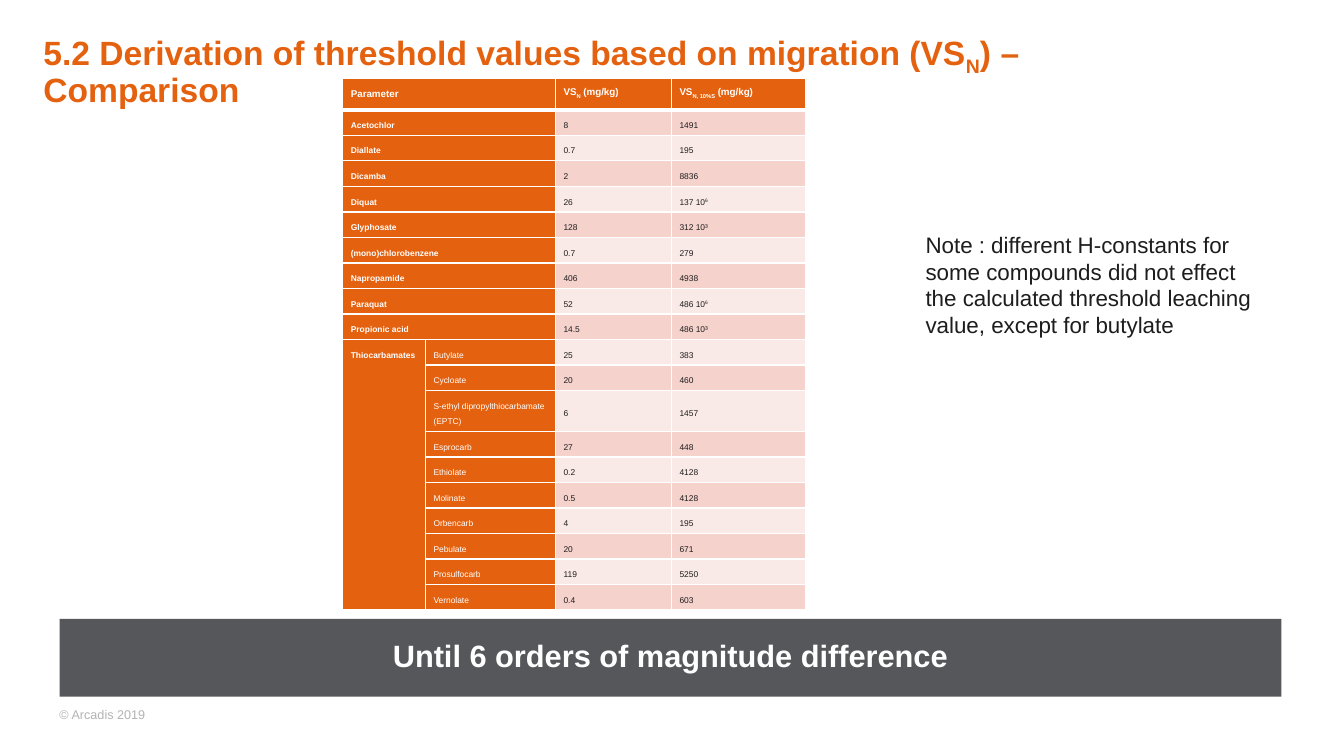
import pptx
import pptx.util
import pptx.dml.color
import pptx.enum.text
import lxml.etree
from pptx.oxml.ns import qn

Inches = pptx.util.Inches
Pt = pptx.util.Pt
Align = pptx.enum.text.PP_ALIGN
Anchor = pptx.enum.text.MSO_ANCHOR

ORANGE, WHITE, INK = "E4610F", "FFFFFF", "1D1D1D"
GREY, SLATE = "B3B3B3", "55575A"
BANDS = ("F5D2CC", "FAEAE7")

TITLE = [
    [("5.2 Derivation of threshold values based on migration (VS", 0), ("N", -25), (") –", 0)],
    [("Comparison", 0)],
]
BANNER = "Until 6 orders of magnitude difference"
NOTE = ("Note : different H-constants for some compounds did not effect "
        "the calculated threshold leaching value, except for butylate")
FOOTER = "© Arcadis 2019"

HEADS = [
    "Parameter",
    [("VS", 0), ("N", -25), (" (mg/kg)", 0)],
    [("VS", 0), ("N, 10%S", -25), (" (mg/kg)", 0)],
]
SINGLES = [
    ("Acetochlor", "8", "1491"),
    ("Diallate", "0.7", "195"),
    ("Dicamba", "2", "8836"),
    ("Diquat", "26", [("137 10", 0), ("6", 30)]),
    ("Glyphosate", "128", "312 10³"),
    ("(mono)chlorobenzene", "0.7", "279"),
    ("Napropamide", "406", "4938"),
    ("Paraquat", "52", [("486 10", 0), ("6", 30)]),
    ("Propionic acid", "14.5", "486 10³"),
]
GROUP = "Thiocarbamates"
MEMBERS = [
    ("Butylate", "25", "383"),
    ("Cycloate", "20", "460"),
    ("S-ethyl dipropylthiocarbamate (EPTC)", "6", "1457"),
    ("Esprocarb", "27", "448"),
    ("Ethiolate", "0.2", "4128"),
    ("Molinate", "0.5", "4128"),
    ("Orbencarb", "4", "195"),
    ("Pebulate", "20", "671"),
    ("Prosulfocarb", "119", "5250"),
    ("Vernolate", "0.4", "603"),
]
WIDTHS = (0.82, 1.29, 1.15, 1.33)
HEAD_H, ROW_H, TALL_H = 0.31, 0.2, 0.3


def color(code):
    return pptx.dml.color.RGBColor.from_string(code)


def write(par, runs, size, code, bold=False):
    if isinstance(runs, str):
        runs = [(runs, 0)]
    for text, base in runs:
        run = par.add_run()
        run.text = text
        run.font.name = "Arial"
        run.font.size = Pt(size)
        run.font.bold = bold
        run.font.color.rgb = color(code)
        if base:
            run.font._element.set("baseline", str(base * 1000))


def place(shape, left, top, width, height):
    shape.left, shape.top = Inches(left), Inches(top)
    shape.width, shape.height = Inches(width), Inches(height)
    return frame(shape)


def frame(shape):
    body = shape.text_frame
    body.word_wrap = True
    body.auto_size = pptx.enum.text.MSO_AUTO_SIZE.NONE
    body.margin_left = body.margin_top = body.margin_right = body.margin_bottom = 0
    body.vertical_anchor = Anchor.TOP
    return body


def label(slide, box, text, size, code):
    shape = slide.shapes.add_textbox(*map(Inches, box))
    write(frame(shape).paragraphs[0], text, size, code)


def border(cell, base):
    props = cell._tc.get_or_add_tcPr()
    for side in "LRTB":
        line = lxml.etree.SubElement(props, qn("a:ln" + side))
        line.set("w", str(Pt(base if side == "B" else 1)))
        fill = lxml.etree.SubElement(line, qn("a:solidFill"))
        lxml.etree.SubElement(fill, qn("a:srgbClr")).set("val", WHITE)


def style(cell, fill, head):
    border(cell, 3 if head else 1)
    cell.fill.solid()
    cell.fill.fore_color.rgb = color(fill)
    cell.margin_left = cell.margin_right = 0
    cell.margin_top = 0 if head else Inches(0.05)
    cell.margin_bottom = Inches(0.05)
    cell.vertical_anchor = Anchor.MIDDLE


def enter(cell, runs, size, code, bold=False):
    par = cell.text_frame.paragraphs[0]
    par._p.get_or_add_pPr().set("marL", str(Inches(0.08)))
    par.line_spacing = Pt(11)
    write(par, runs, size, code, bold)


def add_grid(slide):
    rows = [HEADS] + SINGLES + MEMBERS
    first = 1 + len(SINGLES)
    high = [HEAD_H] + [ROW_H] * (len(rows) - 1)
    high[first + 2] = TALL_H
    grid = slide.shapes.add_table(
        len(rows), len(WIDTHS), Inches(3.4), Inches(0.78),
        Inches(sum(WIDTHS)), Inches(sum(high))).table
    for col, width in zip(grid.columns, WIDTHS):
        col.width = Inches(width)
    for r, (row, height) in enumerate(zip(rows, high)):
        grid.rows[r].height = Inches(height)
        head, member = r == 0, r >= first
        for c in range(len(WIDTHS)):
            style(grid.cell(r, c), ORANGE if head or c < 2 else BANDS[(r - 1) % 2], head)
        if not member:
            grid.cell(r, 0).merge(grid.cell(r, 1))
        size = 7 if head else 6
        enter(grid.cell(r, int(member)), row[0], size, WHITE, not member)
        for c in (2, 3):
            enter(grid.cell(r, c), row[c - 1], size, WHITE if head else INK, head)
    group = grid.cell(first, 0)
    group.merge(grid.cell(len(rows) - 1, 0))
    group.vertical_anchor = Anchor.TOP
    enter(group, GROUP, 6, WHITE, True)


def main():
    deck = pptx.Presentation()
    deck.slide_width, deck.slide_height = Inches(13.33), Inches(7.5)
    slide = deck.slides.add_slide(deck.slide_layouts[1])

    par = place(slide.shapes.title, 0.43, 0.32, 12.12, 0.55).paragraphs[0]
    par.alignment = Align.LEFT
    par.line_spacing = 0.9
    for i, runs in enumerate(TITLE):
        if i:
            par.add_line_break()
        write(par, runs, 24, ORANGE, True)

    bar = slide.placeholders[1]
    body = place(bar, 0.59, 6.14, 12.12, 0.77)
    bar.fill.solid()
    bar.fill.fore_color.rgb = color(SLATE)
    body.vertical_anchor = Anchor.MIDDLE
    par = body.paragraphs[0]
    props = par._p.get_or_add_pPr()
    props.set("marL", "0")
    props.set("indent", "0")
    lxml.etree.SubElement(props, qn("a:buNone"))
    par.alignment = Align.CENTER
    par.line_spacing = 0.9
    par.space_before = Pt(0)
    write(par, BANNER, 22, WHITE, True)

    add_grid(slide)
    label(slide, (9.18, 2.29, 3.44, 1.08), NOTE, 16, INK)
    label(slide, (0.59, 7.01, 3.86, 0.15), FOOTER, 9, GREY)
    deck.save("out.pptx")


if __name__ == "__main__":
    main()
